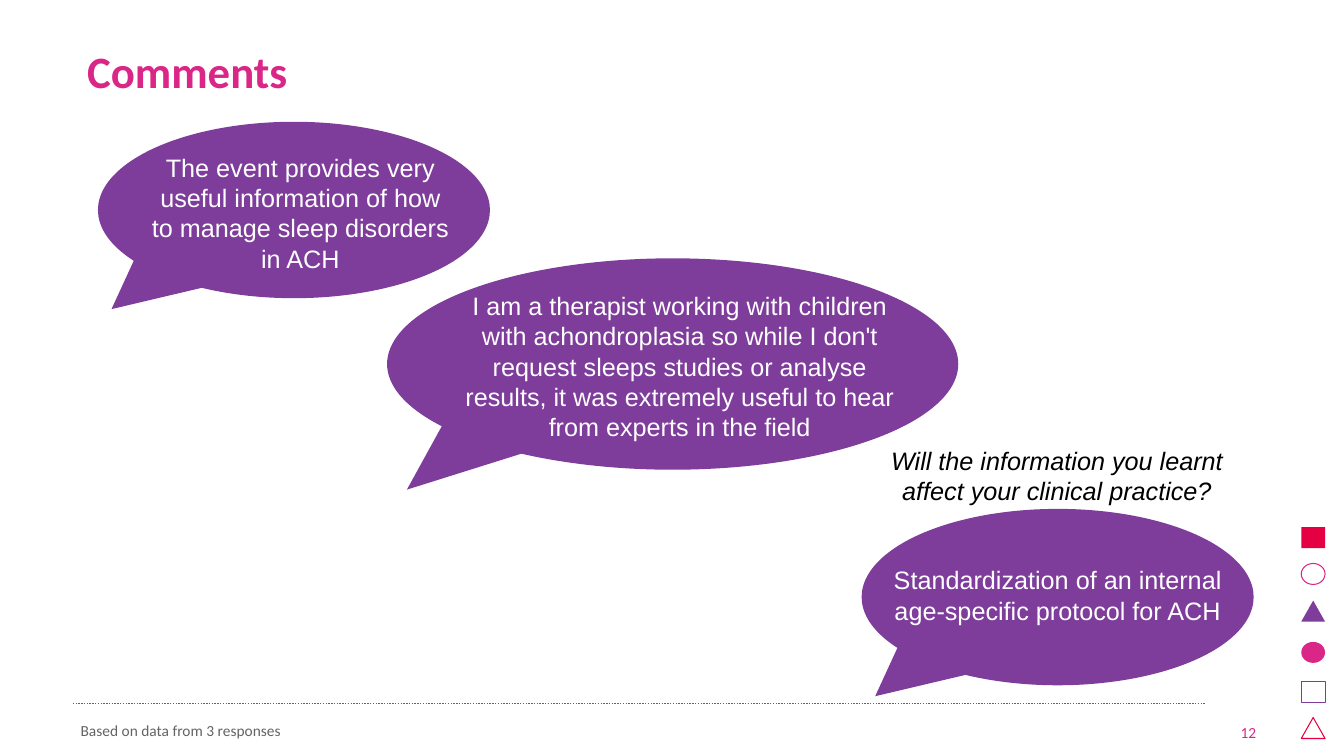
from dataclasses import dataclass

from lxml.etree import SubElement
from pptx import Presentation
from pptx.dml.color import RGBColor as RGB
from pptx.enum.dml import MSO_LINE_DASH_STYLE as DASH
from pptx.enum.shapes import MSO_CONNECTOR as CONNECTOR, MSO_SHAPE as SHAPE
from pptx.enum.text import MSO_ANCHOR as ANCHOR, MSO_AUTO_SIZE as AUTO_SIZE, PP_ALIGN as ALIGN
from pptx.oxml.ns import qn
from pptx.util import Pt


@dataclass(frozen=True)
class Theme:
    """Colours, fonts and type sizes of the slide."""

    purple: RGB = RGB(0x7E, 0x3C, 0x9B)
    pink: RGB = RGB(0xDA, 0x26, 0x86)
    red: RGB = RGB(0xE5, 0x00, 0x43)
    grey: RGB = RGB(0x64, 0x64, 0x64)
    black: RGB = RGB(0, 0, 0)
    white: RGB = RGB(255, 255, 255)
    heading_font: str = "Calibri"
    quote_font: str = "Arial"
    title_size: float = 32
    quote_size: float = 18
    note_size: float = 11


THEME = Theme()


def place(sp, box):
    """Move and size a shape to a (left, top, width, height) box in points."""
    sp.left, sp.top, sp.width, sp.height = map(Pt, box)


def write(sp, text, size, font, color, align, anchor, bold=False, italic=False):
    """Set the text of a shape as one formatted paragraph."""
    tf = sp.text_frame
    tf.word_wrap = True
    tf.auto_size = AUTO_SIZE.NONE
    tf.vertical_anchor = anchor
    tf.text = text
    p = tf.paragraphs[0]
    p.alignment = align
    r = p.runs[0]
    r.font.size, r.font.name, r.font.color.rgb = Pt(size), font, color
    r.font.bold, r.font.italic = bold, italic


def add_text(slide, box, *style, **emphasis):
    """Add a formatted text box and return it."""
    sp = slide.shapes.add_textbox(*map(Pt, box))
    write(sp, *style, **emphasis)
    return sp


def add_preset(slide, kind, box, color, filled=True):
    """Add a preset shape that is either solid or outlined."""
    sp = slide.shapes.add_shape(kind, *map(Pt, box))
    sp.shadow.inherit = False
    if filled:
        sp.fill.solid()
        sp.fill.fore_color.rgb = color
        sp.line.fill.background()
    else:
        sp.fill.background()
        sp.line.color.rgb = color
        sp.line.width = Pt(0.75)
    return sp


def add_markers(slide, box):
    """Stack the small decorative shapes down the right edge."""
    left, top, width, height = box
    markers = [
        (0, SHAPE.RECTANGLE, THEME.red, True),
        (26, SHAPE.OVAL, THEME.pink, False),
        (52.5, SHAPE.ISOSCELES_TRIANGLE, THEME.purple, True),
        (82, SHAPE.OVAL, THEME.pink, True),
        (110, SHAPE.RECTANGLE, THEME.purple, False),
        (136, SHAPE.ISOSCELES_TRIANGLE, THEME.red, False),
    ]
    for offset, kind, color, filled in markers:
        add_preset(slide, kind, (left, top + offset, width, height), color, filled)


def add_title(slide, box, text):
    """Place and format the title placeholder."""
    title = slide.shapes.title
    place(title, box)
    write(title, text, THEME.title_size, THEME.heading_font, THEME.pink,
          ALIGN.LEFT, ANCHOR.MIDDLE, bold=True)
    title.text_frame.paragraphs[0].line_spacing = 0.9


def add_footer(slide, box, note, number):
    """Add the dotted rule, the source note and the page number."""
    left, top, width, height = box
    rule_y = Pt(top + 3)
    rule = slide.shapes.add_connector(
        CONNECTOR.STRAIGHT, Pt(left + 1.5), rule_y, Pt(left + width), rule_y)
    rule.line.color.rgb = THEME.grey
    rule.line.width = Pt(1)
    rule.line.dash_style = DASH.ROUND_DOT
    SubElement(rule._element.spPr, qn("a:effectLst"))
    add_text(slide, box, note, THEME.note_size, THEME.heading_font, THEME.grey,
             ALIGN.LEFT, ANCHOR.BOTTOM)
    add_text(slide, (left + width + 12, top + 1.5, 31, height), number, THEME.note_size,
             THEME.heading_font, THEME.pink, ALIGN.RIGHT, ANCHOR.BOTTOM)


def add_bubble(slide, box, text, text_size, shift, indent=0):
    """Add an oval speech bubble with a tail at its lower left and a quote inside."""
    left, top, width, height = box
    tail_w, tail_h = 0.462 * height, 0.213 * width
    tail_x, tail_y = left + 0.117 * width, top + 0.912 * height
    tail_box = (tail_x - tail_w / 2, tail_y - tail_h / 2, tail_w, tail_h)
    text_w, text_h = text_size
    text_box = (left + (width - text_w) / 2 + shift[0],
                top + (height - text_h) / 2 + shift[1], text_w, text_h)

    add_preset(slide, SHAPE.OVAL, box, THEME.purple)
    tail = add_preset(slide, SHAPE.ISOSCELES_TRIANGLE, tail_box, THEME.purple)
    tail.rotation = 230.7
    quote = add_text(slide, text_box, text, THEME.quote_size, THEME.quote_font,
                     THEME.white, ALIGN.CENTER, ANCHOR.MIDDLE)
    quote.text_frame.margin_left = Pt(7.2 + indent)


def add_question(slide, box, text):
    """Add the italic question above a bubble."""
    add_text(slide, box, text, THEME.quote_size, THEME.quote_font, THEME.black,
             ALIGN.CENTER, ANCHOR.TOP, italic=True)


def build_comments(prs):
    """Build the slide of participants' comments."""
    slide = prs.slides.add_slide(prs.slide_layouts[5])
    add_markers(slide, (929.5, 376.5, 17, 15))
    add_title(slide, (55, 12.5, 850, 80), "Comments")
    add_footer(slide, (50.5, 499.5, 811, 32.5), "Based on data from 3 responses", "12")
    add_bubble(slide, (70, 87, 280, 126),
               "The event provides very useful information of how to manage "
               "sleep disorders in ACH", (263, 94), (-13.5, 2), indent=36)
    add_bubble(slide, (276.5, 184.5, 408, 151),
               "I am a therapist working with children with achondroplasia so while "
               "I don't request sleeps studies or analyse results, it was extremely "
               "useful to hear from experts in the field", (371, 117), (-13, 1.5), indent=36)
    add_question(slide, (628, 314.5, 254, 51),
                 "Will the information you learnt affect your clinical practice?")
    add_bubble(slide, (615.5, 363.5, 280, 126),
               "Standardization of an internal age-specific protocol for ACH",
               (263, 51), (0, -1.5))


def main():
    """Create the presentation and save it."""
    prs = Presentation()
    prs.slide_width, prs.slide_height = Pt(960), Pt(540)
    build_comments(prs)
    prs.save("out.pptx")


if __name__ == "__main__":
    main()
